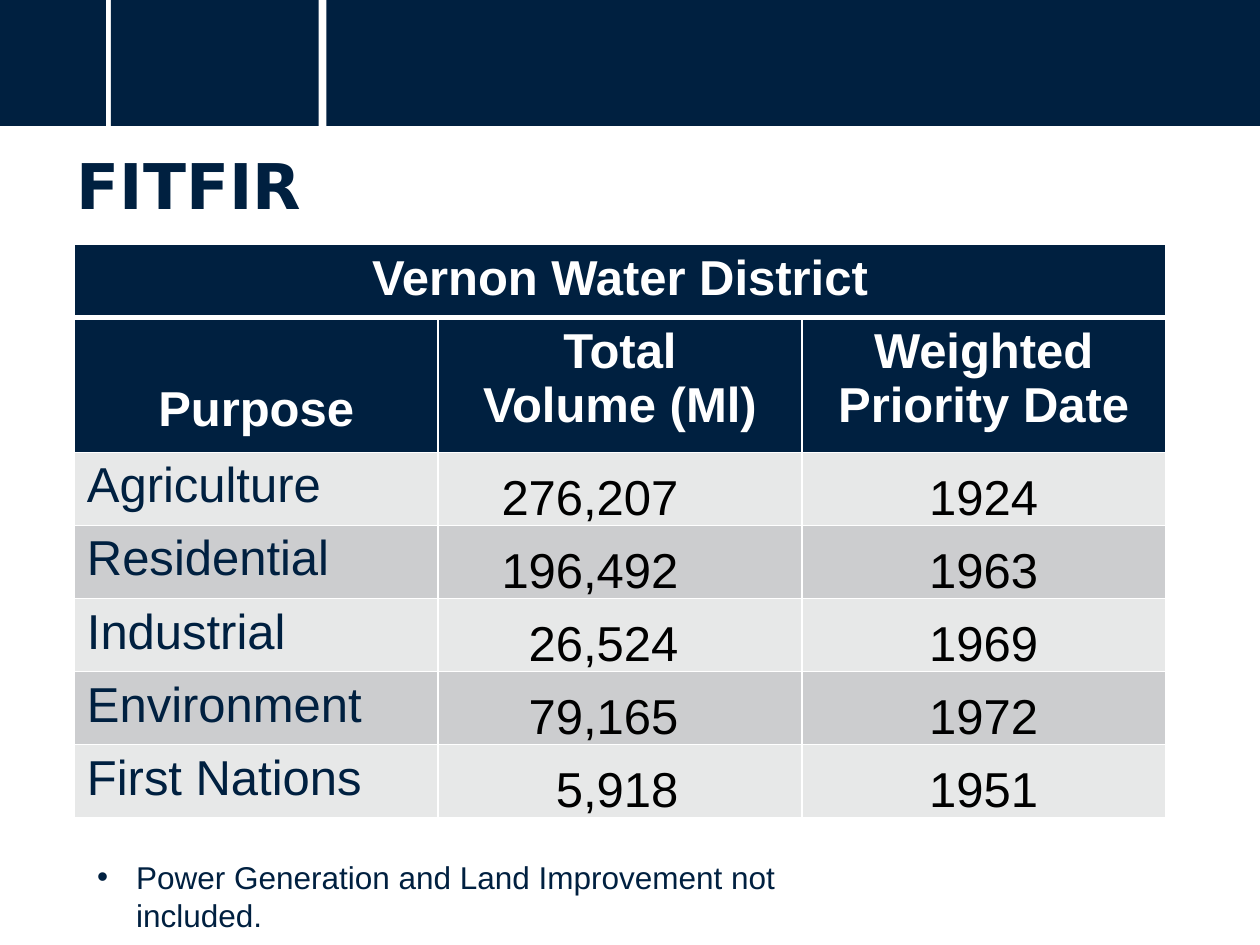
"""Build the FITFIR slide with the water district table."""
from dataclasses import dataclass

from lxml import etree
from pptx import Presentation
from pptx import util as u
from pptx.dml.color import RGBColor
from pptx.enum import shapes, text
from pptx.oxml.ns import qn

WIDE, HIGH = u.Inches(10), u.Inches(7.5)
HUES = {"navy": "002040", "white": "FFFFFF", "black": "000000",
        "light": "E7E8E8", "dark": "CCCDCF"}
LEFT, MID, RIGHT = text.PP_ALIGN.LEFT, text.PP_ALIGN.CENTER, text.PP_ALIGN.RIGHT
TOP, LOW = text.MSO_ANCHOR.TOP, text.MSO_ANCHOR.BOTTOM
PAD = (0.1, 0.05, 0.1, 0.05)
HEADS = ["Purpose", "Total\nVolume (Ml)", "Weighted Priority Date"]
ROWS = [
    ("Agriculture", "276,207", "1924"),
    ("Residential", "196,492", "1963"),
    ("Industrial", "26,524", "1969"),
    ("Environment", "79,165", "1972"),
    ("First Nations", "5,918", "1951"),
]


@dataclass(frozen=True)
class Bar:
    left: float
    wide: float


@dataclass(frozen=True)
class Look:
    hue: str
    align: text.PP_ALIGN = LEFT
    bold: bool = False
    anchor: text.MSO_ANCHOR = TOP
    pad: tuple = PAD


BARS = [Bar(0, 0.084), Bar(0.088, 0.165), Bar(0.259, 0.741)]
HEAD = Look("white", MID, True)
BASE = Look("white", MID, True, LOW, (0.1, 0.05, 0.1, 0.12))
LOOKS = [
    Look("navy"),
    Look("black", RIGHT, anchor=LOW, pad=(0.01, 0.01, 0.98, 0)),
    Look("black", MID, anchor=LOW, pad=(0.01, 0.01, 0.01, 0)),
]


def tint(name: str) -> RGBColor:
    return RGBColor.from_string(HUES[name])


def write(frame, words: str, *, size: float, hue: str, font: str = "Arial",
          bold: bool = False, align: text.PP_ALIGN = LEFT) -> None:
    frame.word_wrap = True
    frame.text = words
    for para in frame.paragraphs:
        para.alignment = align
        para.space_before = u.Pt(0)
        for run in para.runs:
            face = run.font
            face.name, face.size, face.bold = font, u.Pt(size), bold
            face.color.rgb = tint(hue)


def place(shape, left: float, top: float, wide: float, high: float) -> None:
    shape.left, shape.top = u.Inches(left), u.Inches(top)
    shape.width, shape.height = u.Inches(wide), u.Inches(high)


def draw_bar(slide, bar: Bar) -> None:
    shape = slide.shapes.add_shape(
        shapes.MSO_SHAPE.RECTANGLE, int(bar.left * WIDE), 0,
        int(bar.wide * WIDE), int(HIGH * 2 / 15))
    shape.shadow.inherit = False
    shape.fill.solid()
    shape.fill.fore_color.rgb = tint("navy")
    shape.line.fill.background()


def edge(cell, **sides: float) -> None:
    props = cell._tc.get_or_add_tcPr()
    for side in "LRTB":
        line = etree.SubElement(props, qn(f"a:ln{side}"),
                                w=str(u.Pt(sides.get(side, 1))))
        fill = etree.SubElement(line, qn("a:solidFill"))
        etree.SubElement(fill, qn("a:srgbClr"), val=HUES["white"])


def fill_cell(cell, words: str, look: Look, back: str, **sides: float) -> None:
    edge(cell, **sides)
    cell.fill.solid()
    cell.fill.fore_color.rgb = tint(back)
    cell.vertical_anchor = look.anchor
    (cell.margin_left, cell.margin_top,
     cell.margin_right, cell.margin_bottom) = map(u.Inches, look.pad)
    write(cell.text_frame, words, size=28, hue=look.hue,
          bold=look.bold, align=look.align)


def draw_table(slide) -> None:
    grid = slide.shapes.add_table(
        len(ROWS) + 2, 3, u.Inches(0.59), u.Inches(1.94),
        u.Inches(8.66), u.Inches(4.57)).table
    for num, row in enumerate(grid.rows):
        row.height = u.Inches(1.07 if num == 1 else 0.58)
    grid.cell(0, 0).merge(grid.cell(0, 2))
    for col in range(3):
        fill_cell(grid.cell(0, col), "" if col else "Vernon Water District",
                  HEAD, "navy", B=3)
        fill_cell(grid.cell(1, col), HEADS[col], HEAD if col else BASE,
                  "navy", T=3)
        for num, row in enumerate(ROWS):
            fill_cell(grid.cell(num + 2, col), row[col], LOOKS[col],
                      "dark" if num % 2 else "light")


def draw_title(shape) -> None:
    place(shape, 0.51, 1.07, 9, 0.86)
    frame = shape.text_frame
    frame.auto_size = text.MSO_AUTO_SIZE.NONE
    frame.vertical_anchor = text.MSO_ANCHOR.MIDDLE
    frame.margin_bottom = u.Inches(0.12)
    write(frame, "FITFIR", size=36, hue="navy", font="DejaVu Sans", bold=True)


def draw_note(shape) -> None:
    place(shape, 0.67, 6.74, 6.24, 0.4)
    frame = shape.text_frame
    frame.auto_size = text.MSO_AUTO_SIZE.NONE
    frame.vertical_anchor = TOP
    frame.margin_top = u.Inches(0.07)
    write(frame, "Power Generation and Land Improvement not included.",
          size=18, hue="navy")
    para = frame.paragraphs[0]
    props = para._p.get_or_add_pPr()
    props.set("marL", str(u.Inches(0.31)))
    props.set("indent", str(-u.Inches(0.31)))
    etree.SubElement(props, qn("a:buFont"), typeface="Arial")
    etree.SubElement(props, qn("a:buChar"), char="•")
    para.font.size = u.Pt(18)


def main() -> None:
    deck = Presentation()
    deck.slide_width, deck.slide_height = WIDE, HIGH
    slide = deck.slides.add_slide(deck.slide_layouts[1])
    for bar in BARS:
        draw_bar(slide, bar)
    draw_title(slide.shapes.title)
    draw_table(slide)
    draw_note(slide.placeholders[1])
    deck.save("out.pptx")


if __name__ == "__main__":
    main()
